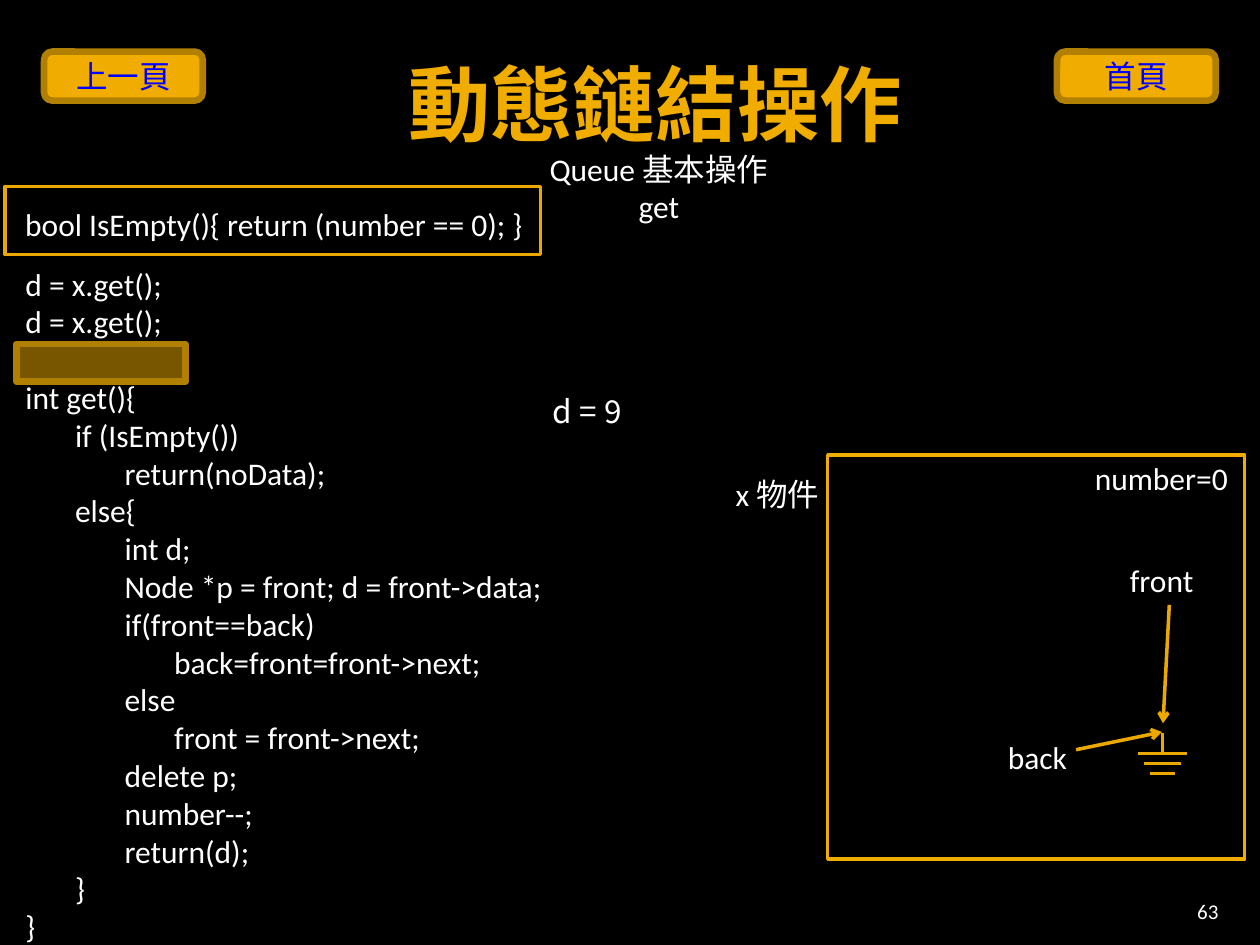
from lxml import etree
from pptx import Presentation
from pptx.dml.color import RGBColor
from pptx.enum import shapes, text
from pptx.oxml import ns
from pptx.util import Pt

COLORS = {
    "black": "000000", "white": "FFFFFF", "gold": "F0AD00",
    "line": "EBA900", "border": "B28000", "link": "0000FF",
}
LATIN = "Calibri"
CJK = "Noto Sans CJK SC"
LINE_PITCH = 21.6
INDENT = 28.35
CODE = [
    (0, "d = x.get();"),
    (0, "d = x.get();"),
    (0, "int get(){"),
    (1, "if (IsEmpty())"),
    (2, "return(noData);"),
    (1, "else{"),
    (2, "int d;"),
    (2, "Node *p = front; d = front->data;"),
    (2, "if(front==back)"),
    (3, "back=front=front->next;"),
    (2, "else"),
    (3, "front = front->next;"),
    (2, "delete p;"),
    (2, "number--;"),
    (2, "return(d);"),
    (1, "}"),
    (0, "}"),
]
LEFT = text.PP_ALIGN.LEFT
CENTER = text.PP_ALIGN.CENTER
RIGHT = text.PP_ALIGN.RIGHT


def rgb(name):
    return RGBColor.from_string(COLORS[name])


def place(item, left, top, width, height):
    item.left, item.top = Pt(left), Pt(top)
    item.width, item.height = Pt(width), Pt(height)


def set_frame(frame, anchor, margins):
    frame.word_wrap = True
    frame.auto_size = text.MSO_AUTO_SIZE.NONE
    frame.vertical_anchor = anchor
    frame.margin_left, frame.margin_top, frame.margin_right, frame.margin_bottom = map(Pt, margins)


def style_para(para, align=LEFT, size=18, color="white", font=LATIN, bold=False):
    para.alignment = align
    for span in para.runs:
        span.font.size = Pt(size)
        span.font.bold = bold
        span.font.name = font
        span.font.color.rgb = rgb(color)
        east = etree.SubElement(span.font._element, ns.qn("a:ea"))
        east.set("typeface", CJK)


def add_title(page, words):
    title = page.shapes.title
    place(title, 59, 15, 631, 72)
    title.text_frame.text = words
    set_frame(title.text_frame, text.MSO_ANCHOR.BOTTOM, (7.2, 0, 7.2, 0))
    style_para(title.text_frame.paragraphs[0], CENTER, 47, "gold", bold=True)


def add_code(page):
    body = page.placeholders[1]
    place(body, 3, 151.2, 312, 376)
    frame = body.text_frame
    frame.text = "\n".join(line for _, line in CODE)
    set_frame(frame, text.MSO_ANCHOR.TOP, (11.5, 0, 0, 0))
    for para, (depth, line) in zip(frame.paragraphs, CODE):
        style_para(para)
        para.line_spacing = Pt(LINE_PITCH)
        para.space_before = Pt(LINE_PITCH if line == "int get(){" else 0)
        props = para._p.get_or_add_pPr()
        props.set("marL", str(Pt(depth * INDENT)))
        props.set("indent", "0")
        etree.SubElement(props, ns.qn("a:buNone"))


def add_label(page, words, left, top, width, height=28.8, align=LEFT, size=18,
              font=LATIN, anchor=text.MSO_ANCHOR.TOP):
    box = page.shapes.add_textbox(Pt(left), Pt(top), Pt(width), Pt(height))
    box.text_frame.text = words
    set_frame(box.text_frame, anchor, (7.2, 3.6, 7.2, 3.6))
    style_para(box.text_frame.paragraphs[0], align, size, font=font)


def add_box(page, kind, left, top, width, height, border, weight, fill=None, alpha=None):
    box = page.shapes.add_shape(kind, Pt(left), Pt(top), Pt(width), Pt(height))
    box.shadow.inherit = False
    box.line.color.rgb = rgb(border)
    box.line.width = Pt(weight)
    if fill is None:
        box.fill.background()
    else:
        box.fill.solid()
        box.fill.fore_color.rgb = rgb(fill)
    if alpha is not None:
        color = box._element.spPr.find(".//" + ns.qn("a:srgbClr"))
        etree.SubElement(color, ns.qn("a:alpha")).set("val", str(alpha * 1000))
    return box


def add_button(page, words, left):
    button = add_box(page, shapes.MSO_SHAPE.ROUNDED_RECTANGLE, left, 29.5, 90.7, 28,
                     "border", 3.78, "gold")
    button.text_frame.text = words
    set_frame(button.text_frame, text.MSO_ANCHOR.MIDDLE, (7.2, 3.6, 7.2, 3.6))
    style_para(button.text_frame.paragraphs[0], CENTER, color="link", font=CJK)


def add_line(parent, start, end, arrow=False):
    line = parent.shapes.add_connector(shapes.MSO_CONNECTOR.STRAIGHT, *map(Pt, start + end))
    line.line.color.rgb = rgb("line")
    line.line.width = Pt(2)
    props = line._element.spPr
    if arrow:
        etree.SubElement(props.find(ns.qn("a:ln")), ns.qn("a:tailEnd")).set("type", "arrow")
    etree.SubElement(props, ns.qn("a:effectLst"))


def add_ground(page, x, top):
    ground = page.shapes.add_group_shape()
    bars_top = top + 11.5
    for i in range(3):
        half, y = 14 - 3.5 * i, bars_top + 5.7 * i
        add_line(ground, (x - half, y), (x + half, y))
    add_line(ground, (x, top), (x, bars_top))


def main():
    deck = Presentation()
    deck.slide_width, deck.slide_height = Pt(720), Pt(540)
    page = deck.slides.add_slide(deck.slide_layouts[1])
    page.background.fill.solid()
    page.background.fill.fore_color.rgb = rgb("black")
    rectangle = shapes.MSO_SHAPE.RECTANGLE

    add_code(page)
    add_label(page, "Queue 基本操作 get", 298, 82, 157, align=CENTER)

    method = add_box(page, rectangle, 2.9, 106.6, 306, 38.9, "line", 2)
    method.text_frame.text = "bool IsEmpty(){ return (number == 0); }"
    set_frame(method.text_frame, text.MSO_ANCHOR.TOP, (11.5, 0, 3.6, 0))
    style_para(method.text_frame.paragraphs[0])
    method.text_frame.paragraphs[0].line_spacing = 1.5

    add_title(page, "動態鏈結操作")
    add_label(page, "63", 645.8, 509.8, 57.6, 21.6, RIGHT, 12, anchor=text.MSO_ANCHOR.BOTTOM)
    add_box(page, rectangle, 473, 260, 238.3, 231, "gold", 2)
    add_box(page, rectangle, 9.4, 196.6, 96.5, 21.6, "border", 3.78, "gold", 50)

    add_label(page, "x 物件", 413.3, 267.8, 62.6)
    add_label(page, "number=0", 618.5, 258.5, 93)
    add_label(page, "front", 638.6, 316.8, 53)
    add_line(page, (668.2, 345.6), (664.6, 413.3), arrow=True)
    add_label(page, "back", 568.8, 418.3, 51)
    add_line(page, (614.9, 428.4), (664, 418.3), arrow=True)
    add_ground(page, 664.4, 419)
    add_label(page, "d = 9", 308.9, 220.3, 59, font=CJK)

    add_button(page, "上一頁", 25.2)
    add_button(page, "首頁", 604)
    deck.save("out.pptx")


if __name__ == "__main__":
    main()
